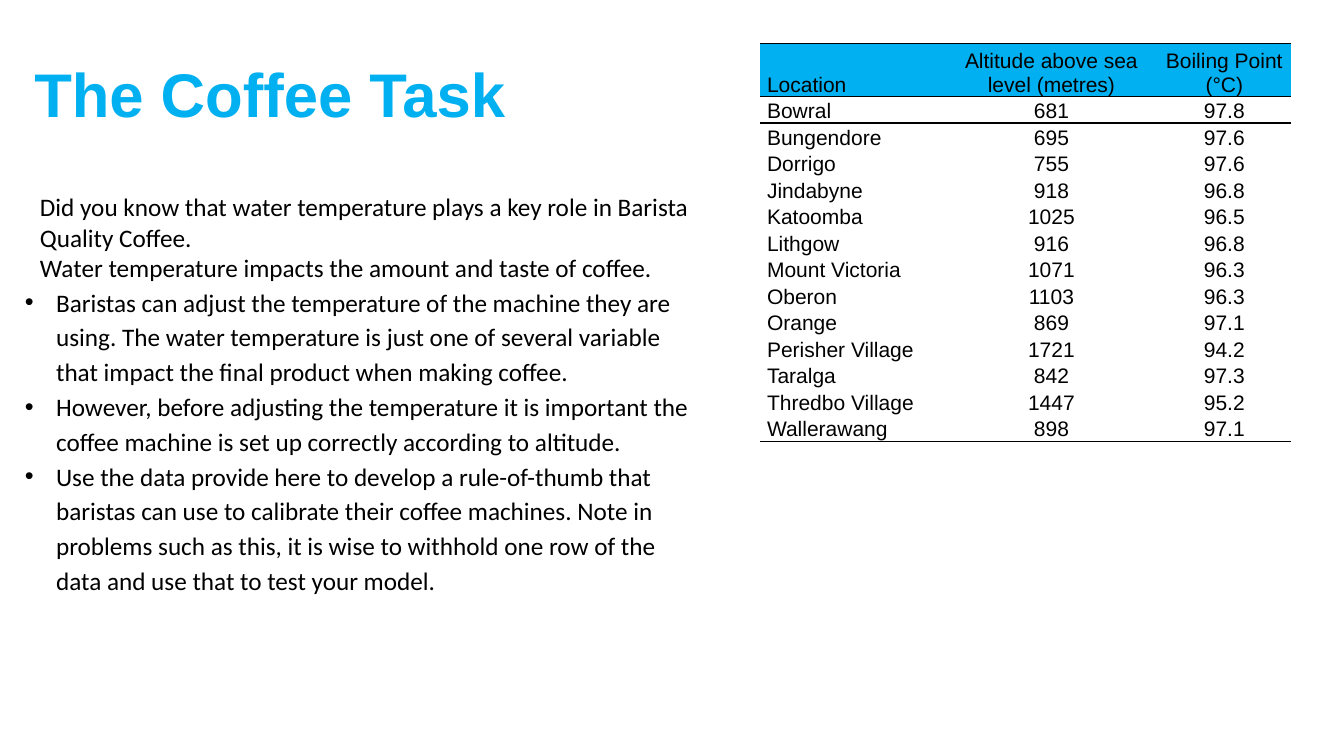
import pptx
import pptx.dml.color
import pptx.enum.text
import pptx.oxml
import pptx.oxml.ns
import pptx.util
from lxml import etree

Inches = pptx.util.Inches
Pt = pptx.util.Pt
ALIGN = pptx.enum.text.PP_ALIGN
ANCHOR = pptx.enum.text.MSO_ANCHOR
AUTO_SIZE = pptx.enum.text.MSO_AUTO_SIZE
qn = pptx.oxml.ns.qn

BLUE = pptx.dml.color.RGBColor(0x00, 0xB0, 0xF0)
BLACK = pptx.dml.color.RGBColor(0x00, 0x00, 0x00)

WIDTH, HEIGHT = Inches(13.33), Inches(7.5)
PLAIN_TABLE_STYLE = "{2D5ABB26-0587-4C30-8999-92F81FD0307C}"
COLUMN_WIDTHS = (1.84, 2.1, 1.33)
HEADER_HEIGHT, ROW_HEIGHT = 0.53, 0.263

INTRO = (
    "Did you know that water temperature plays a key role in Barista Quality Coffee.",
    "Water temperature impacts the amount and taste of coffee.",
)
BULLETS = (
    "Baristas can adjust the temperature of the machine they are using. The water "
    "temperature is just one of several variable that impact the final product when "
    "making coffee.",
    "However, before adjusting the temperature it is important the coffee machine is "
    "set up correctly according to altitude.",
    "Use the data provide here to develop a rule-of-thumb that baristas can use to "
    "calibrate their coffee machines. Note in problems such as this, it is wise to "
    "withhold one row of the data and use that to test your model.",
)
BOILING_POINTS = (
    ("Location", "Altitude above sea level (metres)", "Boiling Point (°C)"),
    ("Bowral", "681", "97.8"),
    ("Bungendore", "695", "97.6"),
    ("Dorrigo", "755", "97.6"),
    ("Jindabyne", "918", "96.8"),
    ("Katoomba", "1025", "96.5"),
    ("Lithgow", "916", "96.8"),
    ("Mount Victoria", "1071", "96.3"),
    ("Oberon", "1103", "96.3"),
    ("Orange", "869", "97.1"),
    ("Perisher Village", "1721", "94.2"),
    ("Taralga", "842", "97.3"),
    ("Thredbo Village", "1447", "95.2"),
    ("Wallerawang", "898", "97.1"),
)


def place(shape, left, top, width, height):
    """Position a shape by shares of the slide's size."""
    shape.left, shape.top = int(WIDTH * left), int(HEIGHT * top)
    shape.width, shape.height = int(WIDTH * width), int(HEIGHT * height)


def set_font(paragraph, name, size, color, bold=False):
    paragraph.font.name = name
    paragraph.font.size = Pt(size)
    paragraph.font.color.rgb = color
    paragraph.font.bold = bold


def set_bullet(paragraph, bullet, margin, indent):
    properties = paragraph._p.get_or_add_pPr()
    properties.set("marL", str(Inches(margin)))
    properties.set("indent", str(Inches(indent)))
    if bullet:
        etree.SubElement(properties, qn("a:buFont"), typeface="Arial")
        etree.SubElement(properties, qn("a:buChar"), char=bullet)
    else:
        etree.SubElement(properties, qn("a:buNone"))


def add_title(page, text):
    title = page.shapes.title
    place(title, 0.018, 0.053, 0.961, 0.152)
    title.text_frame.text = text
    title.text_frame.vertical_anchor = ANCHOR.MIDDLE
    para = title.text_frame.paragraphs[0]
    para.alignment = ALIGN.LEFT
    para.line_spacing = 0.9
    set_font(para, "Arial", 44, BLUE, bold=True)


def add_body(page):
    body = page.placeholders[1]
    place(body, 0.011, 0.247, 0.512, 0.549)
    frame = body.text_frame
    frame.word_wrap = True
    frame.auto_size = AUTO_SIZE.SHAPE_TO_FIT_TEXT
    frame.text = "\n".join(INTRO + BULLETS)
    for index, para in enumerate(frame.paragraphs):
        if index < len(INTRO):
            set_bullet(para, None, 0.15, 0)
            para.line_spacing = 1.0
        else:
            set_bullet(para, "•", 0.31, -0.31)
            para.line_spacing = 1.15
        para.space_before = para.space_after = Pt(0)
        para.alignment = ALIGN.LEFT
        set_font(para, "Calibri", 18, BLACK)


def add_border(cell, side):
    line = etree.SubElement(cell._tc.get_or_add_tcPr(), qn("a:" + side), w=str(Pt(1)))
    fill = etree.SubElement(line, qn("a:solidFill"))
    etree.SubElement(fill, qn("a:srgbClr"), val=str(BLACK))


def format_cell(cell, text, centred, borders, fill):
    cell.text = text
    cell.vertical_anchor = ANCHOR.BOTTOM
    cell.margin_left = cell.margin_right = Inches(0.07)
    cell.margin_top = cell.margin_bottom = 0
    para = cell.text_frame.paragraphs[0]
    para.alignment = ALIGN.CENTER if centred else ALIGN.LEFT
    set_font(para, "Arial", 15, BLACK)
    for side in borders:
        add_border(cell, side)
    if fill is None:
        cell.fill.background()
    else:
        cell.fill.solid()
        cell.fill.fore_color.rgb = fill


def add_data_table(page, rows):
    height = HEADER_HEIGHT + ROW_HEIGHT * (len(rows) - 1)
    frame = page.shapes.add_table(
        len(rows), len(COLUMN_WIDTHS), int(WIDTH * 0.5655), int(HEIGHT * 0.057),
        Inches(sum(COLUMN_WIDTHS)), Inches(height))
    table = frame.table
    table._tbl.tblPr.find(qn("a:tableStyleId")).text = PLAIN_TABLE_STYLE
    table.first_row = table.horz_banding = False
    for column, width in zip(table.columns, COLUMN_WIDTHS):
        column.width = Inches(width)

    # Rules lie above and below the header and under the last row
    borders = {0: ("lnT", "lnB"), 1: ("lnT",), len(rows) - 1: ("lnB",)}
    for row, texts in enumerate(rows):
        table.rows[row].height = Inches(ROW_HEIGHT if row else HEADER_HEIGHT)
        for column, text in enumerate(texts):
            format_cell(table.cell(row, column), text, column > 0,
                        borders.get(row, ()), None if row else BLUE)


def main():
    deck = pptx.Presentation()
    deck.slide_width, deck.slide_height = WIDTH, HEIGHT
    page = deck.slides.add_slide(deck.slide_layouts[1])

    # Heading and explanation on the left
    add_title(page, "The Coffee Task")
    add_body(page)

    # Altitude data on the right
    add_data_table(page, BOILING_POINTS)
    deck.save("out.pptx")


if __name__ == "__main__":
    main()
